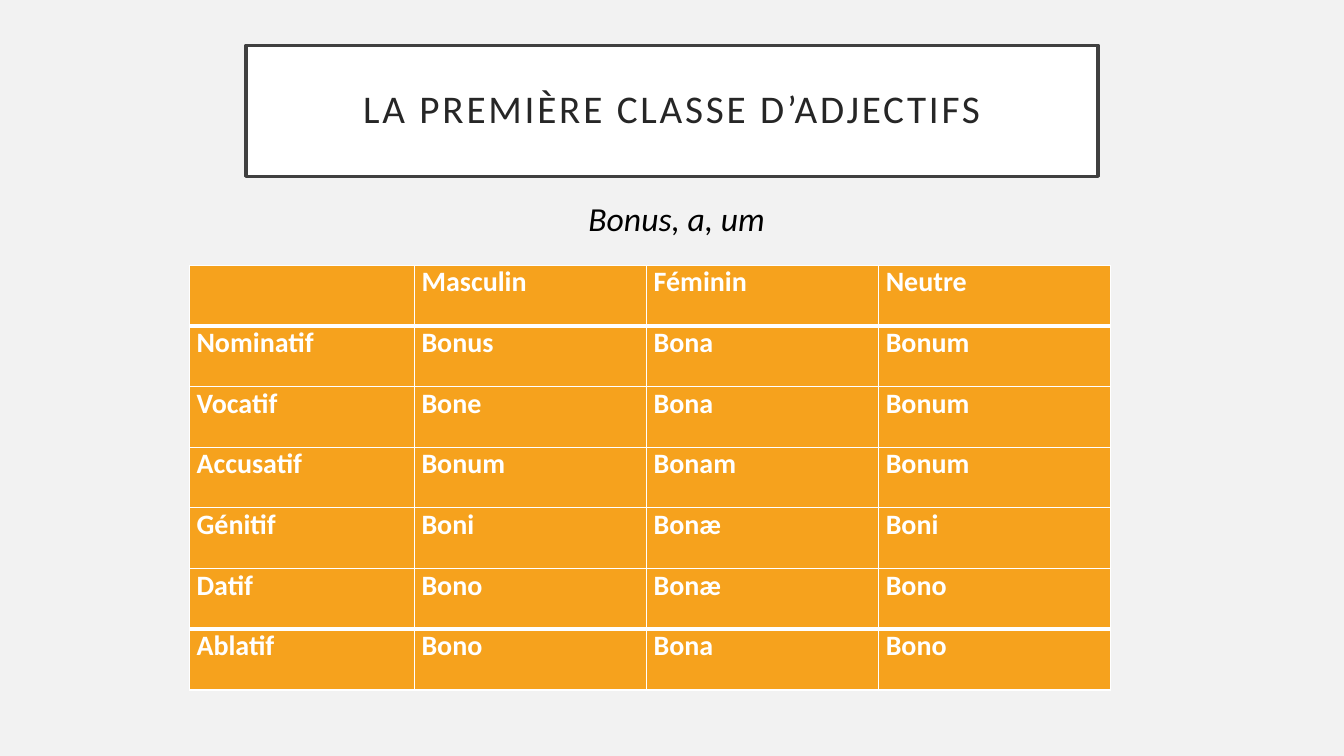
from lxml import etree
from pptx import Presentation
from pptx.dml.color import RGBColor
from pptx.enum import shapes, text
from pptx.oxml import ns
from pptx.util import Pt

PAPER = RGBColor(0xF2, 0xF2, 0xF2)
WHITE = RGBColor(0xFF, 0xFF, 0xFF)
BLACK = RGBColor(0, 0, 0)
FRAME = RGBColor(0x40, 0x40, 0x40)
INK = RGBColor(0x26, 0x26, 0x26)
ORANGE = RGBColor(0xF6, 0xA2, 0x1D)

DECLENSION = [
    ("", "Masculin", "Féminin", "Neutre"),
    ("Nominatif", "Bonus", "Bona", "Bonum"),
    ("Vocatif", "Bone", "Bona", "Bonum"),
    ("Accusatif", "Bonum", "Bonam", "Bonum"),
    ("Génitif", "Boni", "Bonæ", "Boni"),
    ("Datif", "Bono", "Bonæ", "Bono"),
    ("Ablatif", "Bono", "Bona", "Bono"),
]
COLUMN_WIDTHS = (160.7, 165.8, 165.8, 165.8)
ROW_HEIGHT = 43.37


def set_all(target, values):
    for name, value in values.items():
        setattr(target, name, value)


def write(frame, words, size, color, **font_format):
    """Put one run of text in the frame and return its paragraph and run."""
    para = frame.paragraphs[0]
    span = para.add_run()
    span.text = words
    set_all(span.font, {"name": "Calibri", "size": Pt(size), **font_format})
    span.font.color.rgb = color
    return para, span


def add_title(page, words):
    box = page.shapes.add_shape(shapes.MSO_SHAPE.RECTANGLE,
                                Pt(175.7), Pt(32.4), Pt(608.6), Pt(93.6))
    box.shadow.inherit = False
    box.fill.solid()
    box.fill.fore_color.rgb = WHITE
    box.line.color.rgb = FRAME
    box.line.width = Pt(2.5)
    frame = box.text_frame
    sides = ("left", "top", "right", "bottom")
    set_all(frame, {f"margin_{side}": Pt(14.4) for side in sides})
    set_all(frame, {"word_wrap": True, "vertical_anchor": text.MSO_ANCHOR.MIDDLE})
    para, span = write(frame, words, 28, INK)
    set_all(para, {"alignment": text.PP_ALIGN.CENTER, "line_spacing": 0.9})
    span.font._element.set("spc", "200")


def add_subtitle(page, words):
    box = page.shapes.add_textbox(Pt(413.3), Pt(138.2), Pt(155.5), Pt(36))
    box.text_frame.word_wrap = True
    write(box.text_frame, words, 24, BLACK, italic=True)


def add_borders(cell, top, bottom):
    """Draw white cell borders; side borders are always one point wide."""
    properties = cell._tc.get_or_add_tcPr()
    for side, width in {"L": 1, "R": 1, "T": top, "B": bottom}.items():
        line = etree.SubElement(properties, ns.qn(f"a:ln{side}"), w=str(Pt(width)))
        fill = etree.SubElement(line, ns.qn("a:solidFill"))
        etree.SubElement(fill, ns.qn("a:srgbClr"), val=str(WHITE))


def add_declension(page, rows):
    table = page.shapes.add_table(
        len(rows), len(COLUMN_WIDTHS), Pt(135.4), Pt(189.4),
        Pt(sum(COLUMN_WIDTHS)), Pt(ROW_HEIGHT * len(rows))).table
    for column, width in zip(table.columns, COLUMN_WIDTHS):
        column.width = Pt(width)
    thick_edges = (1, len(rows) - 1)
    for r, row in enumerate(rows):
        table.rows[r].height = Pt(ROW_HEIGHT)
        top, bottom = (3 if edge in thick_edges else 1 for edge in (r, r + 1))
        for c, words in enumerate(row):
            cell = table.cell(r, c)
            set_all(cell, {"margin_left": Pt(5), "margin_right": Pt(5),
                           "margin_top": 0, "margin_bottom": 0})
            add_borders(cell, top, bottom)
            cell.fill.solid()
            cell.fill.fore_color.rgb = ORANGE
            if words:
                write(cell.text_frame, words, 20, WHITE, bold=True)


def main():
    deck = Presentation()
    set_all(deck, {"slide_width": Pt(960), "slide_height": Pt(540)})
    page = deck.slides.add_slide(deck.slide_layouts[6])
    page.background.fill.solid()
    page.background.fill.fore_color.rgb = PAPER
    add_title(page, "LA PREMIÈRE CLASSE D’ADJECTIFS")
    add_declension(page, DECLENSION)
    add_subtitle(page, "Bonus, a, um")
    deck.save("out.pptx")


if __name__ == "__main__":
    main()
